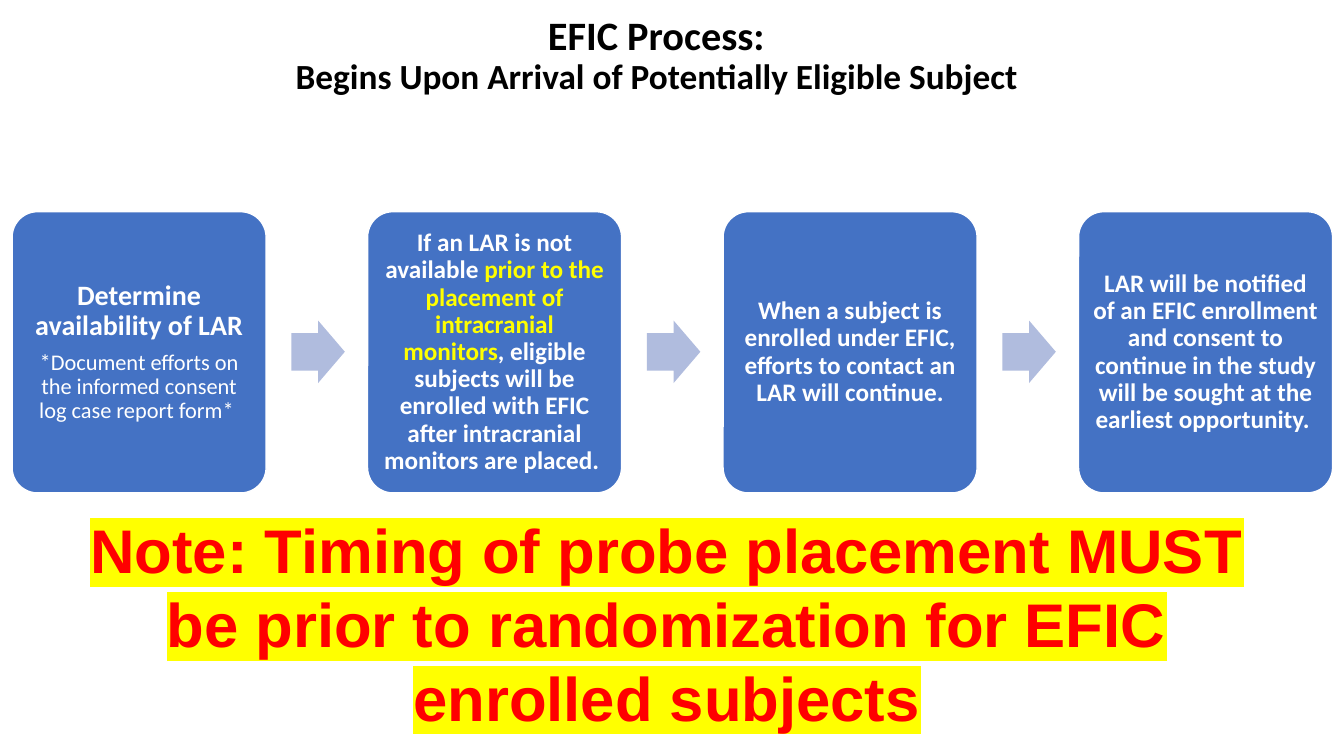
from dataclasses import dataclass

from lxml.etree import SubElement
from pptx import Presentation
from pptx.dml.color import RGBColor
from pptx.enum.shapes import MSO_SHAPE
from pptx.enum.text import MSO_ANCHOR, PP_ALIGN
from pptx.oxml.ns import qn
from pptx.shapes.autoshape import Shape
from pptx.slide import Slide
from pptx.util import Inches, Pt

WIDE, HIGH = 13.33, 7.5
WHITE, BLACK, RED, YELLOW = "FFFFFF", "000000", "FF0000", "FFFF00"
BLUE, PALE = "4472C4", "B0BCDE"
PITCH = 26.45


@dataclass(frozen=True)
class Area:
    """Left, top, width and height in percent of the slide."""
    left: float
    top: float
    width: float
    height: float

    def shift(self, count: int) -> "Area":
        return Area(self.left + count * PITCH, self.top, self.width, self.height)

    def lengths(self) -> tuple[int, int, int, int]:
        return (Inches(WIDE * self.left / 100), Inches(HIGH * self.top / 100),
                Inches(WIDE * self.width / 100), Inches(HIGH * self.height / 100))


@dataclass(frozen=True)
class Part:
    text: str
    size: float = 18
    tint: str = WHITE
    bold: bool = True
    font: str = "Calibri"
    mark: str = ""


@dataclass(frozen=True)
class Step:
    paras: list[list[Part]]
    inset: float = 0.07


TITLE = Area(0, 3.87, 98.35, 9.6)
CARD = Area(0.9, 28, 18.9, 37.2)
ARROW = Area(21.68, 42.4, 3.98, 8.27)
NOTE = Area(3.15, 67.07, 92.95, 30.93)

STEPS = [
    Step([[Part("Determine availability of LAR", 20)],
          [Part("*Document efforts on the informed consent log case report form* ",
                16, bold=False)]], 0.08),
    Step([[Part("If an LAR is not available "),
           Part("prior to the placement of intracranial monitors", tint=YELLOW),
           Part(", eligible subjects will be enrolled with EFIC after "
                "intracranial monitors are placed. ")]]),
    Step([[Part("When a subject is enrolled under EFIC, efforts to contact "
                "an LAR will continue.")]]),
    Step([[Part("LAR will be notified of an EFIC enrollment and consent to "
                "continue in the study will be sought at the earliest "
                "opportunity. ")]]),
]


def color(code: str) -> RGBColor:
    return RGBColor.from_string(code)


def write(para, part: Part) -> None:
    lines = part.text.split("\n")
    for index, line in enumerate(lines):
        if index:
            para.add_line_break()
        if not line:
            continue
        run = para.add_run()
        run.text = line
        font = run.font
        font.size, font.bold = Pt(part.size), part.bold
        font.color.rgb = color(part.tint)
        if part.mark:
            light = SubElement(font._element, qn("a:highlight"))
            SubElement(light, qn("a:srgbClr"), val=part.mark)
        font.name = part.font


def fill_text(shape: Shape, paras: list[list[Part]], anchor: MSO_ANCHOR,
              space: float = 0.9, after: float = 0) -> None:
    frame = shape.text_frame
    frame.word_wrap = True
    frame.vertical_anchor = anchor
    for index, parts in enumerate(paras):
        para = frame.add_paragraph() if index else frame.paragraphs[0]
        para.alignment = PP_ALIGN.CENTER
        para.line_spacing = space
        para.space_after = Pt(after)
        for part in parts:
            write(para, part)


def draw_shape(slide: Slide, kind: MSO_SHAPE, area: Area, tint: str,
               bends: list[float]) -> Shape:
    shape = slide.shapes.add_shape(kind, *area.lengths())
    shape.shadow.inherit = False
    shape.fill.solid()
    shape.fill.fore_color.rgb = color(tint)
    shape.line.fill.background()
    for index, bend in enumerate(bends):
        shape.adjustments[index] = bend
    return shape


def draw_step(slide: Slide, step: Step, index: int) -> None:
    card = draw_shape(slide, MSO_SHAPE.ROUNDED_RECTANGLE, CARD.shift(index),
                      BLUE, [0.1])
    card.line.color.rgb = color(WHITE)
    card.line.width = Pt(1)
    frame = card.text_frame
    frame.margin_left = frame.margin_right = Inches(step.inset)
    frame.margin_top = frame.margin_bottom = Inches(step.inset)
    fill_text(card, step.paras, MSO_ANCHOR.MIDDLE, after=6.5)
    if index < len(STEPS) - 1:
        draw_shape(slide, MSO_SHAPE.RIGHT_ARROW, ARROW.shift(index), PALE,
                   [0.6, 0.5])


def main() -> None:
    deck = Presentation()
    deck.slide_width, deck.slide_height = Inches(WIDE), Inches(HIGH)
    slide = deck.slides.add_slide(deck.slide_layouts[6])

    title = slide.shapes.add_textbox(*TITLE.lengths())
    fill_text(title, [[Part("EFIC Process: \n", 28.8, BLACK),
                       Part("Begins Upon Arrival of Potentially Eligible Subject ",
                            25.2, BLACK)]], MSO_ANCHOR.BOTTOM)

    for index, step in enumerate(STEPS):
        draw_step(slide, step, index)

    note = slide.shapes.add_textbox(*NOTE.lengths())
    fill_text(note, [[Part("Note: Timing of probe placement MUST be prior to "
                           "randomization for EFIC enrolled subjects",
                           44, RED, font="Arial", mark=YELLOW)]],
              MSO_ANCHOR.TOP, space=1.0)

    deck.save("out.pptx")


if __name__ == "__main__":
    main()
